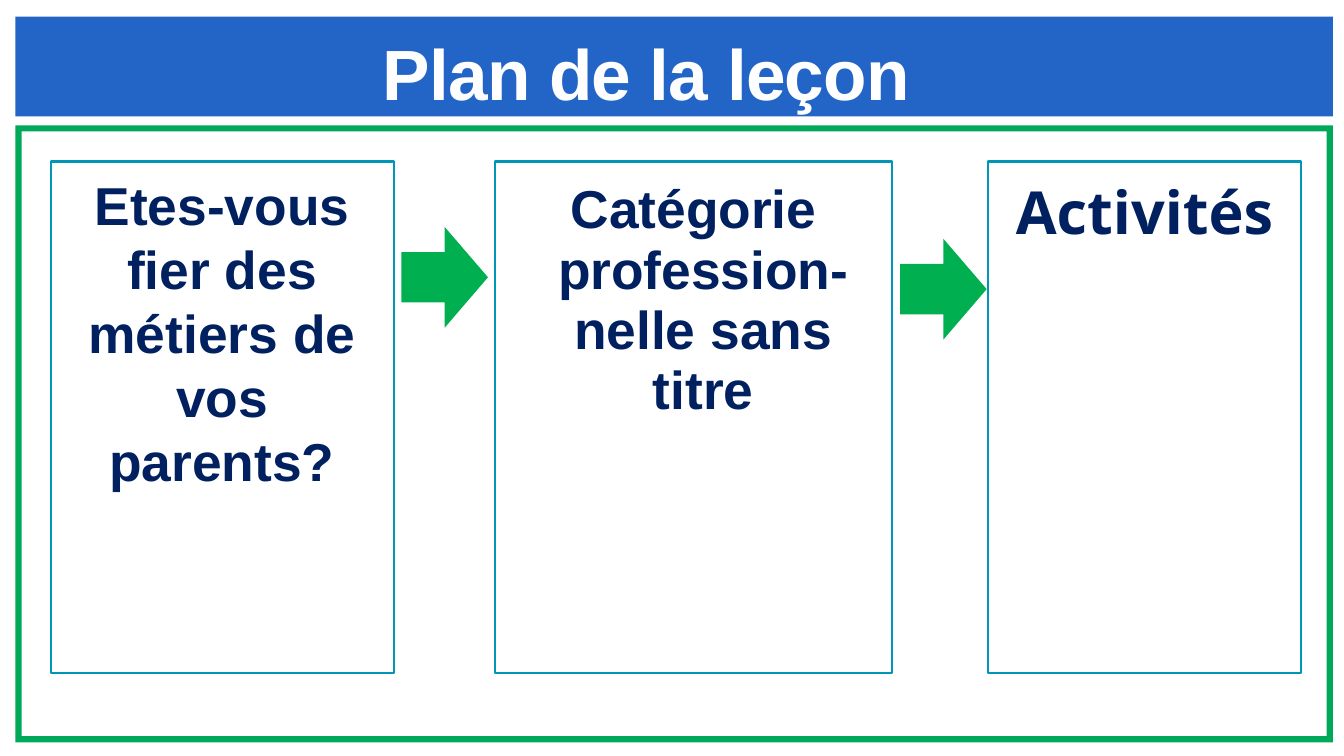
from pptx import Presentation
from pptx.dml.color import RGBColor
from pptx.enum.shapes import MSO_SHAPE
from pptx.enum.text import MSO_ANCHOR, MSO_AUTO_SIZE, PP_ALIGN
from pptx.util import Pt

BLUE = RGBColor(0x23, 0x65, 0xC7)
FRAME_GREEN = RGBColor(0x00, 0xA8, 0x59)
ARROW_GREEN = RGBColor(0x00, 0xB0, 0x50)
TEAL = RGBColor(0x00, 0x97, 0xB7)
NAVY = RGBColor(0x00, 0x20, 0x60)
WHITE = RGBColor(0xFF, 0xFF, 0xFF)
OFF_WHITE = RGBColor(0xFE, 0xFE, 0xFE)

PANEL_TOP, PANEL_HEIGHT = 54.55, 172.7


def add_figure(slide, preset, left, top, width, height, fill=None, line=None):
    figure = slide.shapes.add_shape(preset, Pt(left), Pt(top), Pt(width), Pt(height))
    figure.shadow.inherit = False
    if fill is None:
        figure.fill.background()
    else:
        figure.fill.solid()
        figure.fill.fore_color.rgb = fill
    if line is None:
        figure.line.fill.background()
    else:
        figure.line.color.rgb = line
        figure.line.width = Pt(0.75)
    return figure


def add_label(slide, left, top, width, height):
    label = slide.shapes.add_textbox(Pt(left), Pt(top), Pt(width), Pt(height))
    label.text_frame.word_wrap = True
    label.text_frame.auto_size = MSO_AUTO_SIZE.SHAPE_TO_FIT_TEXT
    return label.text_frame


def set_insets(frame, left, top, right, bottom):
    frame.margin_left, frame.margin_top = Pt(left), Pt(top)
    frame.margin_right, frame.margin_bottom = Pt(right), Pt(bottom)


def style_run(run, size, color, font="Arial"):
    run.font.name = font
    run.font.size = Pt(size)
    run.font.bold = True
    run.font.color.rgb = color


def write_topic(frame, text, size, font="Arial"):
    frame.text = text
    topic = frame.paragraphs[0]
    topic.alignment = PP_ALIGN.CENTER
    style_run(topic.runs[0], size, NAVY, font)
    return topic


def add_panel(slide, left, width):
    return add_figure(slide, MSO_SHAPE.RECTANGLE, left, PANEL_TOP, width,
                      PANEL_HEIGHT, line=TEAL)


def add_topic_panel(slide, left, width, text, size, font="Arial"):
    frame = add_panel(slide, left, width).text_frame
    frame.word_wrap = True
    frame.vertical_anchor = MSO_ANCHOR.TOP
    set_insets(frame, 6.5, 6.5, 6.5, 6.5)
    topic = write_topic(frame, text, size, font)
    topic.line_spacing = 0.94
    topic.space_after = Pt(3.8)
    # Hanging indent of the first line
    properties = topic._p.get_or_add_pPr()
    properties.set("marL", str(Pt(6.5)))
    properties.set("indent", str(-Pt(6.5)))


def add_title(slide):
    frame = add_label(slide, 79.5, 8.6, 276.5, 30.2)
    frame.vertical_anchor = MSO_ANCHOR.MIDDLE
    set_insets(frame, 0, 1.4, 0, 0)
    title = frame.paragraphs[0]
    title.alignment = PP_ALIGN.CENTER
    title.space_before = Pt(1.3)
    title._p.get_or_add_pPr().set("marL", str(Pt(0.7)))
    for text, color in (("Plan de la ", OFF_WHITE), ("leçon", WHITE)):
        run = title.add_run()
        run.text = text
        style_run(run, 24, color)
        run.font._element.set("spc", "-25")


def main():
    presentation = Presentation()
    # 160 mm by 90 mm
    presentation.slide_width, presentation.slide_height = Pt(453.54), Pt(255.12)
    slide = presentation.slides.add_slide(presentation.slide_layouts[6])

    # Green frame and title band
    border = add_figure(slide, MSO_SHAPE.FRAME, 5.2, 42.3, 444.6, 208.2, fill=FRAME_GREEN)
    border.adjustments[0] = 0.01
    add_figure(slide, MSO_SHAPE.RECTANGLE, 5.2, 5.6, 444.6, 33.7, fill=BLUE)
    add_title(slide)

    # Arrows between the steps
    for left, top in ((135.5, 76.6), (303.8, 80.6)):
        add_figure(slide, MSO_SHAPE.RIGHT_ARROW, left, top, 29.2, 34, fill=ARROW_GREEN)

    # Three steps of the lesson
    add_panel(slide, 17.2, 115.9)
    add_topic_panel(slide, 167, 134.1, "Catégorie profession-nelle sans titre", 18)
    add_topic_panel(slide, 333.4, 105.7, "Activités", 20, "Open Sans")
    question = add_label(slide, 16.6, PANEL_TOP, 116.6, 116.6)
    write_topic(question, "Etes-vous fier des métiers de vos parents?", 18)

    presentation.save("out.pptx")


if __name__ == "__main__":
    main()
